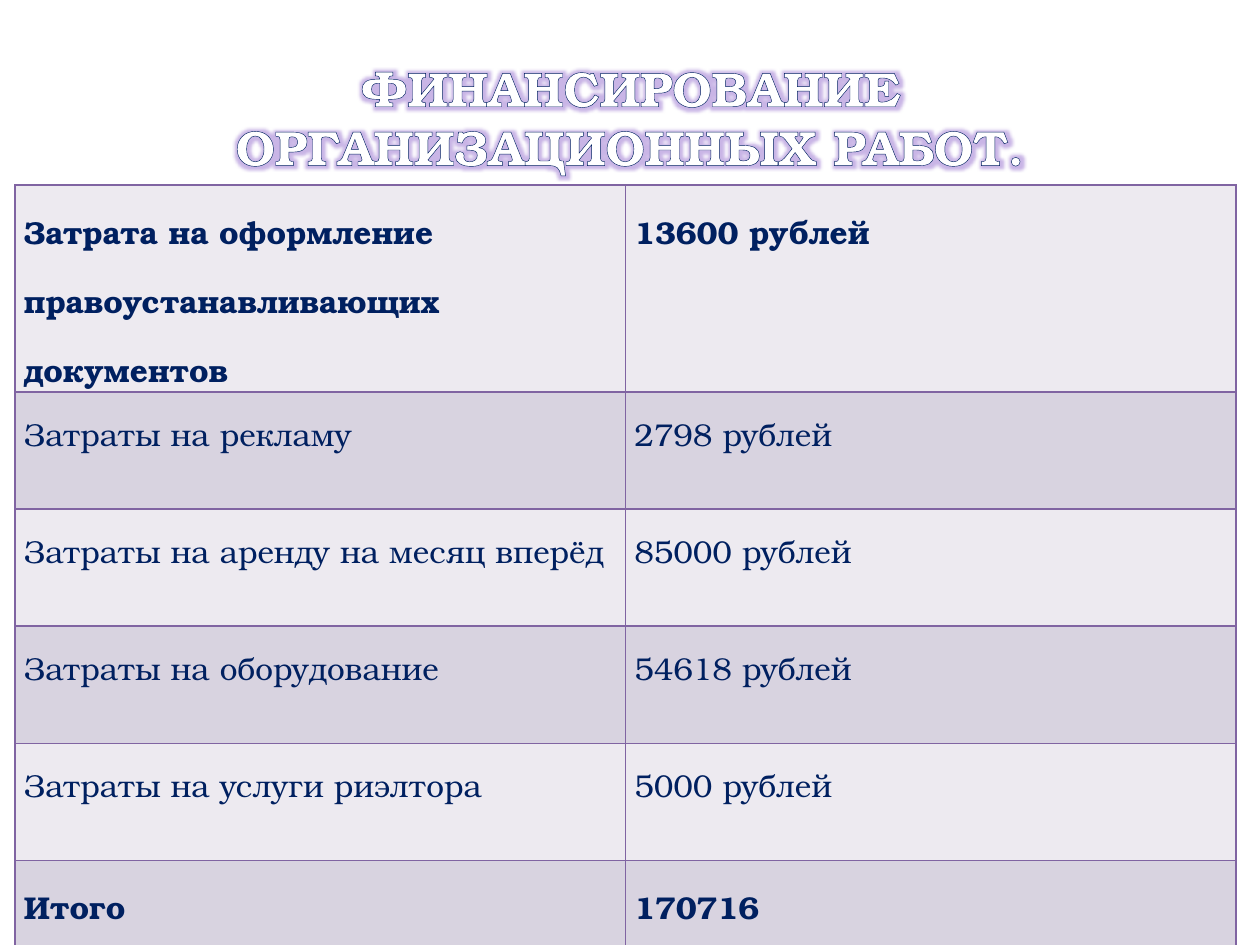
from lxml import etree
from pptx import Presentation
from pptx.dml.color import RGBColor
from pptx.enum.text import MSO_ANCHOR, PP_ALIGN
from pptx.oxml import parse_xml
from pptx.oxml.ns import nsdecls, qn
from pptx.util import Inches, Pt

FONT = "TeX Gyre Bonum"
COLORS = {
    "navy": "002060",
    "white": "FFFFFF",
    "border": "8064A2",
    "glow": "C9B5E6",
    "light_row": "EDEAF0",
    "dark_row": "D8D3E0",
}
TITLE = "ФИНАНСИРОВАНИЕ ОРГАНИЗАЦИОННЫХ РАБОТ."
COSTS = [
    ("Затрата на оформление правоустанавливающих документов", "13600 рублей"),
    ("Затраты на рекламу", "2798 рублей"),
    ("Затраты на аренду на месяц вперёд", "85000 рублей"),
    ("Затраты на оборудование", "54618 рублей"),
    ("Затраты на услуги риэлтора", "5000 рублей"),
    ("Итого", "170716"),
]
FIRST_ROW_HEIGHT, ROW_HEIGHT = 1.64, 0.93


def rgb(name):
    return RGBColor.from_string(COLORS[name])


def write_text(frame, text, size=18, color="navy", bold=False,
               align=PP_ALIGN.LEFT, spacing=None):
    frame.word_wrap = True
    paragraph = frame.paragraphs[0]
    paragraph.alignment = align
    paragraph.line_spacing = spacing
    run = paragraph.add_run()
    run.text = text
    run.font.name = FONT
    run.font.size = Pt(size)
    run.font.bold = bold
    run.font.color.rgb = rgb(color)
    return run


def line_xml(tag, color, width):
    return parse_xml(
        f'<a:{tag} {nsdecls("a")} w="{Pt(width)}"><a:solidFill>'
        f'<a:srgbClr val="{COLORS[color]}"/></a:solidFill></a:{tag}>')


def add_outline_and_glow(run):
    properties = run.font._element
    properties.insert(0, line_xml("ln", "navy", 1.5))
    effects = etree.Element(qn("a:effectLst"))
    glow = etree.SubElement(effects, qn("a:glow"), rad=str(Pt(10)))
    etree.SubElement(glow, qn("a:srgbClr"), val=COLORS["glow"])
    properties.find(qn("a:solidFill")).addnext(effects)


def add_title(slide, left, top, width, height):
    box = slide.shapes.add_textbox(
        Inches(left), Inches(top), Inches(width), Inches(height))
    box.text_frame.vertical_anchor = MSO_ANCHOR.MIDDLE
    heading = write_text(box.text_frame, TITLE, size=28, color="white",
                         bold=True, align=PP_ALIGN.CENTER)
    add_outline_and_glow(heading)


def style_cell(cell, fill):
    cell.margin_left = cell.margin_right = Inches(0.07)
    cell.margin_top = cell.margin_bottom = 0
    properties = cell._tc.get_or_add_tcPr()
    for side in ("lnL", "lnR", "lnT", "lnB"):
        properties.append(line_xml(side, "border", 1))
    cell.fill.solid()
    cell.fill.fore_color.rgb = rgb(fill)


def add_cost_table(slide, left, top, width):
    heights = [FIRST_ROW_HEIGHT] + [ROW_HEIGHT] * (len(COSTS) - 1)
    table = slide.shapes.add_table(
        len(COSTS), 2, Inches(left), Inches(top),
        Inches(width), Inches(sum(heights))).table
    for column in table.columns:
        column.width = Inches(width / 2)
    for index, (cost, height) in enumerate(zip(COSTS, heights)):
        table.rows[index].height = Inches(height)
        fill = "dark_row" if index % 2 else "light_row"
        bold = index in (0, len(COSTS) - 1)
        for cell, text in zip(table.rows[index].cells, cost):
            style_cell(cell, fill)
            write_text(cell.text_frame, text, bold=bold, spacing=1.5)


def main():
    deck = Presentation()
    deck.slide_width, deck.slide_height = Inches(10), Inches(7.5)
    slide = deck.slides.add_slide(deck.slide_layouts[6])
    add_title(slide, 0.5, 0.3, 9, 1.25)
    add_cost_table(slide, 0.12, 1.47, 9.69)
    deck.save("out.pptx")


if __name__ == "__main__":
    main()
